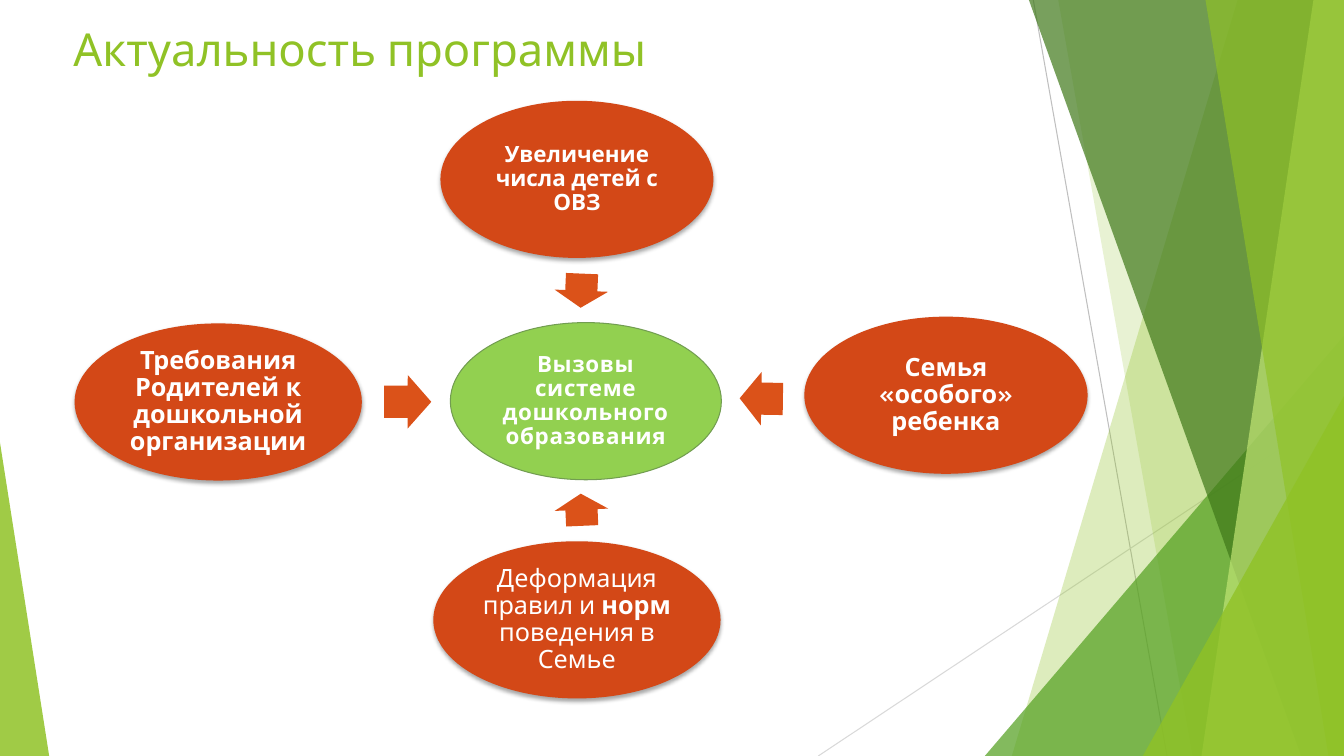
"""Build the slide about the relevance of the programme."""
import dataclasses

import lxml.etree
import pptx
import pptx.dml.color
import pptx.enum.shapes
import pptx.enum.text
import pptx.oxml
import pptx.oxml.ns
import pptx.util

Cm, Pt = pptx.util.Cm, pptx.util.Pt
SHAPE = pptx.enum.shapes.MSO_SHAPE
ALIGN = pptx.enum.text.PP_ALIGN
W, H = 33.87, 19.05
NS = pptx.oxml.ns.nsdecls("a")


@dataclasses.dataclass(frozen=True)
class Theme:
    """Colours, font and type sizes of the deck."""
    font: str = "Karla"
    title_size: float = 32.4
    large: int = 18
    small: int = 16
    white: str = "FFFFFF"
    lime: str = "90C226"
    pale: str = "C0E474"
    leaf: str = "54A021"
    forest: str = "3F7819"
    core: str = "92D050"
    core_line: str = "729D51"
    cause: str = "D34817"
    arrow: str = "DB5219"
    rule_dark: str = "BFBFBF"
    rule_light: str = "D9D9D9"


class Deck:
    """Draws styled elements on the current slide."""

    def __init__(self, prs, theme):
        self.theme = theme
        self.s = prs.slides.add_slide(prs.slide_layouts[6])

    def paint(self, sp, color, alpha=100):
        """Give a shape a plain fill with no line or shadow."""
        sp.shadow.inherit = False
        sp.line.fill.background()
        sp.fill.solid()
        sp.fill.fore_color.rgb = pptx.dml.color.RGBColor.from_string(color)
        if alpha < 100:
            clr = sp.fill._xPr.find(".//" + pptx.oxml.ns.qn("a:srgbClr"))
            lxml.etree.SubElement(clr, pptx.oxml.ns.qn("a:alpha"), val=str(alpha * 1000))

    def style(self, p, size, color, bold=False):
        """Set the type of a paragraph."""
        p.font.name = self.theme.font
        p.font.size = Pt(size)
        p.font.bold = bold
        p.font.color.rgb = pptx.dml.color.RGBColor.from_string(color)

    def rule(self, start, end, color):
        """Draw a thin line."""
        cx = self.s.shapes.add_connector(
            pptx.enum.shapes.MSO_CONNECTOR.STRAIGHT, *map(Cm, start + end))
        cx.line.width = Pt(0.75)
        cx.line.color.rgb = pptx.dml.color.RGBColor.from_string(color)
        cx._element.spPr.append(pptx.oxml.parse_xml(f"<a:effectLst {NS}/>"))

    def ribbon(self, top, bottom, color, alpha):
        """Draw a slanted band that runs to the right edge."""
        fb = self.s.shapes.build_freeform(Cm(top), 0)
        fb.add_line_segments([(Cm(W), 0), (Cm(W), Cm(H)), (Cm(bottom), Cm(H))])
        self.paint(fb.convert_to_shape(), color, alpha)

    def corner(self, x, y, w, apex, color, alpha):
        """Draw a right triangle that stands on the bottom edge."""
        sp = self.s.shapes.add_shape(
            SHAPE.ISOSCELES_TRIANGLE, Cm(x), Cm(y), Cm(w), Cm(H - y))
        sp.adjustments[0] = apex
        self.paint(sp, color, alpha)

    def title(self, text):
        """Write the slide title."""
        tf = self.s.shapes.add_textbox(Cm(1.6), Cm(0.41), Cm(24.16), Cm(1.75)).text_frame
        tf.word_wrap = True
        p = tf.paragraphs[0]
        p.text = text
        self.style(p, self.theme.title_size, self.theme.lime)

    def arrow(self, x, y, w, angle):
        """Draw a block arrow turned by an angle."""
        sp = self.s.shapes.add_shape(SHAPE.RIGHT_ARROW, Cm(x), Cm(y), Cm(w), Cm(1.35))
        sp.adjustments[0] = 0.6
        sp.rotation = angle
        self.paint(sp, self.theme.arrow)

    def oval(self, x, y, w, color, size, runs):
        """Draw an ellipse with centred text given as (text, bold) runs."""
        sp = self.s.shapes.add_shape(SHAPE.OVAL, Cm(x), Cm(y), Cm(w), Cm(3.96))
        self.paint(sp, color)
        tf = sp.text_frame
        tf.word_wrap = True
        tf.vertical_anchor = pptx.enum.text.MSO_ANCHOR.MIDDLE
        tf.margin_left = tf.margin_right = tf.margin_top = tf.margin_bottom = Cm(0.06)
        p = tf.paragraphs[0]
        p.alignment = ALIGN.CENTER
        p.line_spacing = 0.9
        self.style(p, size, self.theme.white, runs[0][1])
        for text, bold in runs:
            r = p.add_run()
            r.text = text
            if bold != runs[0][1]:
                r.font.bold = bold
        return sp

    def core(self, x, y, w, text):
        """Draw the outlined central ellipse."""
        sp = self.oval(x, y, w, self.theme.core, self.theme.small, [(text, True)])
        sp.line.width = Pt(0.75)
        sp.line.color.rgb = pptx.dml.color.RGBColor.from_string(self.theme.core_line)
        sp.text_frame.paragraphs[0].font._element.set("spc", "50")

    def cause(self, x, y, w, size, runs):
        """Draw an outer ellipse with a soft shadow."""
        sp = self.oval(x, y, w, self.theme.cause, size, runs)
        effects = sp._element.spPr.find(pptx.oxml.ns.qn("a:effectLst"))
        effects.append(pptx.oxml.parse_xml(
            f'<a:outerShdw {NS} blurRad="{Pt(3)}" dist="{Pt(2)}" dir="5400000" '
            'rotWithShape="0"><a:srgbClr val="000000"><a:alpha val="35000"/>'
            '</a:srgbClr></a:outerShdw>'))


def main():
    """Compose and save the slide."""
    prs = pptx.Presentation()
    prs.slide_width, prs.slide_height = Cm(W), Cm(H)
    t = Theme()
    d = Deck(prs, t)

    d.rule((26.04, 0), (29.41, H), t.rule_dark)
    d.rule((W, 10.24), (20.62, H), t.rule_light)
    d.ribbon(31.19, 25.5, t.lime, 30)
    d.ribbon(26.67, 30.05, t.lime, 20)
    d.corner(24.82, 8.46, W - 24.82, 1, t.leaf, 72)
    d.ribbon(25.93, 32.79, t.forest, 70)
    d.ribbon(33.1, 30.28, t.pale, 70)
    d.ribbon(30.38, 33.48, t.lime, 65)
    d.corner(28.8, 9.98, W - 28.8, 1, t.lime, 80)
    d.corner(0, 11.15, 1.24, 0, t.lime, 85)

    d.title("Актуальность программы")
    d.core(11.35, 8.13, 6.83, "Вызовы системе дошкольного образования")
    for x, y, w, angle in [(14.22, 6.65, 0.86, 92.4), (18.64, 9.37, 1.09, 180.9),
                           (14.25, 12.17, 0.81, 267.5), (9.68, 9.45, 1.19, 0.2)]:
        d.arrow(x, y, w, angle)
    for x, y, w, size, runs in [
        (11.1, 2.54, 6.88, t.small, [("Увеличение числа детей с ОВЗ", True)]),
        (20.27, 7.98, 7.14, t.large, [("Семья «особого» ребенка", True)]),
        (10.92, 13.64, 7.24, t.large, [("Деформация правил и ", False), ("норм", True),
                                       (" поведения в Семье", False)]),
        (1.88, 8.15, 7.24, t.large,
         [("Требования Родителей к дошкольной организации", True)]),
    ]:
        d.cause(x, y, w, size, runs)
    prs.save("out.pptx")


if __name__ == "__main__":
    main()
